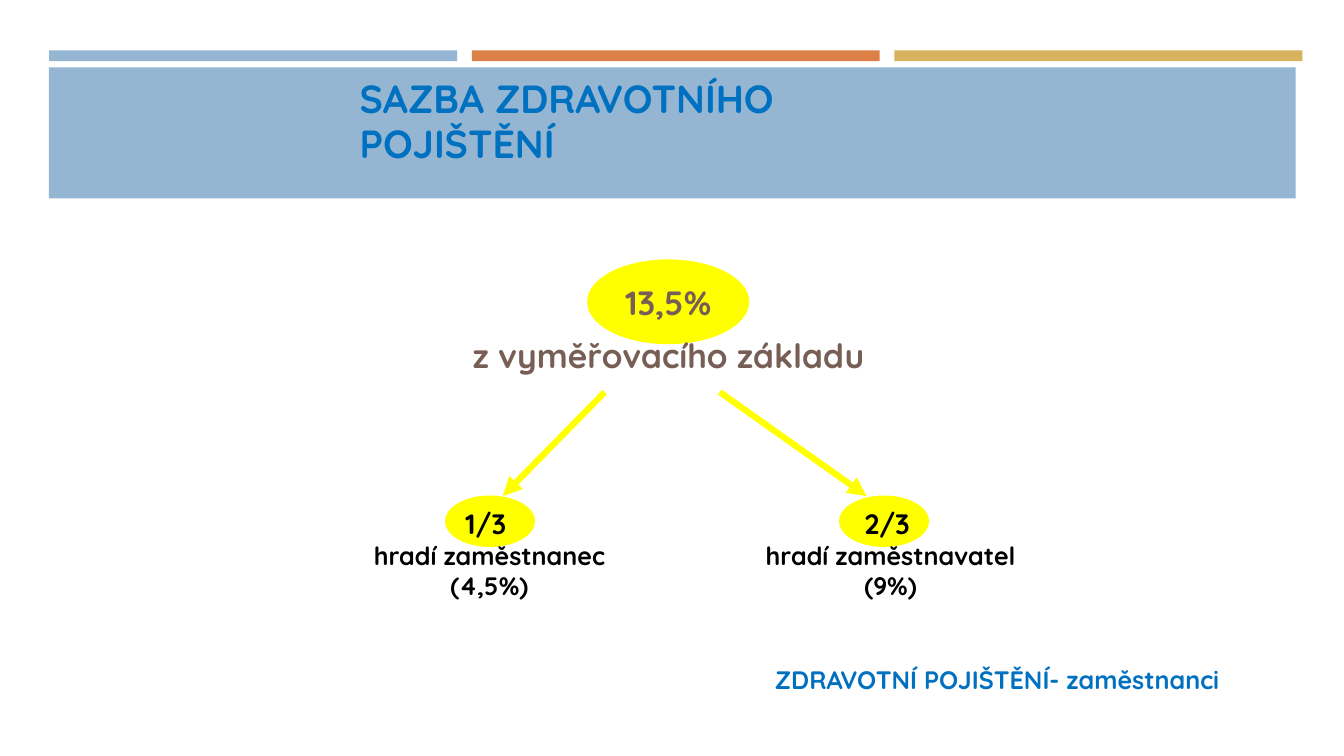
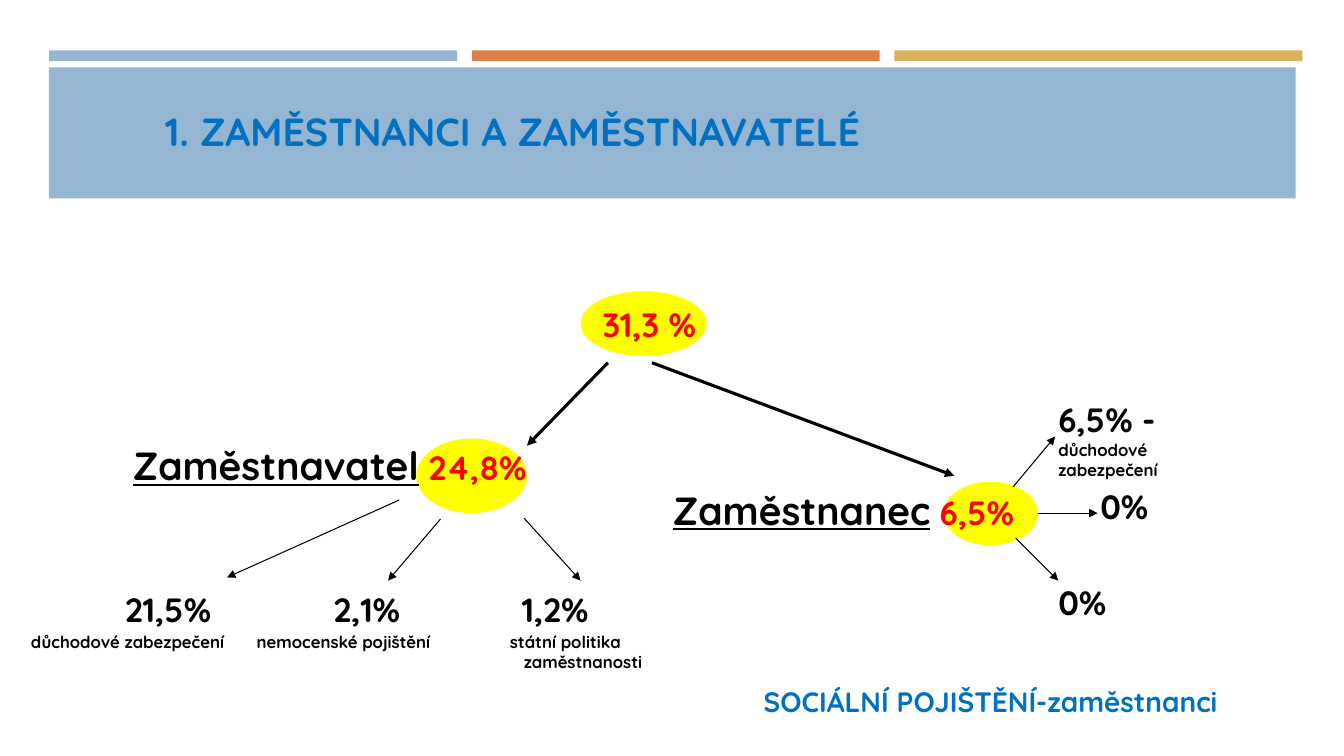
from dataclasses import dataclass
from typing import Any, NamedTuple

from lxml.etree import SubElement
from pptx import Presentation
from pptx.dml.color import RGBColor
from pptx.enum.shapes import MSO_CONNECTOR as Connector, MSO_SHAPE as Shape
from pptx.enum.text import MSO_ANCHOR as Anchor, MSO_AUTO_SIZE as AutoSize, PP_ALIGN as Align
from pptx.oxml.ns import qn
from pptx.util import Cm, Pt


@dataclass(frozen=True)
class Theme:
    font: str = "Quicksand"
    blue: str = "94B6D2"
    orange: str = "DD8047"
    gold: str = "D8B25C"
    heading: str = "0070C0"
    brown: str = "775F55"
    yellow: str = "FFFF00"
    red: str = "FF0000"
    black: str = "000000"
    title: int = 28
    figure: int = 24
    share: int = 20
    text: int = 18
    small: int = 12


T = Theme()


class Box(NamedTuple):
    left: float
    top: float
    width: float
    height: float


class Run(NamedTuple):
    text: str
    size: int = T.figure
    color: str = T.black
    underline: bool = False


class Para(NamedTuple):
    runs: list[Run]
    indent: float = 0


class Arrow(NamedTuple):
    x1: float
    y1: float
    x2: float
    y2: float
    color: str = T.black
    width: float = 0.75


class Payer(NamedTuple):
    box: Box
    share: str
    name: str
    rate: str


class Contribution(NamedTuple):
    rate: str
    rate_left: float
    label: list[Para]
    label_left: float


def apply(target: Any, fmt: dict[str, Any]) -> None:
    for name, value in fmt.items():
        setattr(target, name, value)


def place(sp: Any, box: Box) -> None:
    apply(sp, {name: Cm(value) for name, value in box._asdict().items()})


def line(text: str, size: int = T.figure, color: str = T.black, indent: float = 0) -> Para:
    return Para([Run(text, size, color)], indent)


def write(tf: Any, paras: list[Para], align: Align = Align.LEFT,
          anchor: Anchor = Anchor.TOP, **spacing: Any) -> None:
    apply(tf, {"word_wrap": True, "auto_size": AutoSize.NONE, "vertical_anchor": anchor})
    for i, para in enumerate(paras):
        p = tf.add_paragraph() if i else tf.paragraphs[0]
        apply(p, {"alignment": align, **spacing})
        pPr = p._p.get_or_add_pPr()
        pPr.set("marL", str(Cm(para.indent)))
        pPr.set("indent", "0")
        SubElement(pPr, qn("a:buNone"))
        for run in para.runs:
            r = p.add_run()
            r.text = run.text
            apply(r.font, {"name": T.font, "size": Pt(run.size), "bold": True,
                           "underline": run.underline})
            r.font.color.rgb = RGBColor.from_string(run.color)


def add_text(s: Any, box: Box, paras: list[Para], **fmt: Any) -> None:
    sp = s.shapes.add_textbox(*map(Cm, box))
    write(sp.text_frame, paras, **fmt)


def fill_placeholder(sp: Any, box: Box, paras: list[Para], **fmt: Any) -> None:
    place(sp, box)
    write(sp.text_frame, paras, **fmt)


def add_back_shape(s: Any, kind: Shape, box: Box, color: str, outlined: bool = False) -> Any:
    """Add a filled shape behind everything else on the slide."""
    sp = s.shapes.add_shape(kind, *map(Cm, box))
    sp.shadow.inherit = False
    sp.fill.solid()
    sp.fill.fore_color.rgb = RGBColor.from_string(color)
    if outlined:
        sp.line.color.rgb = RGBColor.from_string(color)
        sp.line.width = Pt(0.75)
    else:
        sp.line.fill.background()
    s.shapes.element.insert(2, sp.element)
    return sp


def add_arrow(s: Any, a: Arrow) -> None:
    c = s.shapes.add_connector(Connector.STRAIGHT, Cm(a.x1), Cm(a.y1), Cm(a.x2), Cm(a.y2))
    c.line.color.rgb = RGBColor.from_string(a.color)
    c.line.width = Pt(a.width)
    SubElement(c.line._get_or_add_ln(), qn("a:tailEnd"), type="triangle")
    SubElement(c.element.spPr, qn("a:effectLst"))


def add_master_bands(prs: Any, s: Any) -> None:
    """Draw the bands on a slide, then move them to the master."""
    bands = [(Box(1.24 + i * 10.65, 1.27, 10.28, 0.27), color)
             for i, color in enumerate((T.blue, T.orange, T.gold))]
    bands.append((Box(1.23, 1.7, 31.42, 3.3), T.blue))
    for box, color in bands:
        sp = add_back_shape(s, Shape.RECTANGLE, box, color)
        prs.slide_master.shapes.element.insert(2, sp.element)


def build_health_slide(s: Any) -> None:
    title, body = s.placeholders
    fill_placeholder(title, Box(8.81, 1.68, 15.6, 2.82),
                     [line("SAZBA ZDRAVOTNÍHO POJIŠTĚNÍ", T.title, T.heading)],
                     anchor=Anchor.MIDDLE, line_spacing=0.95)
    fill_placeholder(body, Box(11.23, 6.78, 11.23, 3.1),
                     [line("13,5%", color=T.brown),
                      line("z vyměřovacího základu", color=T.brown)],
                     align=Align.CENTER, anchor=Anchor.MIDDLE, line_spacing=0.95,
                     space_before=Pt(4.8), space_after=Pt(6))
    for box in (Box(14.81, 6.55, 4.06, 2.11), Box(11.23, 12.5, 2.24, 1.27),
                Box(21.16, 12.5, 2.24, 1.27)):
        add_back_shape(s, Shape.OVAL, box, T.yellow, outlined=True)
    for arrow in (Arrow(15.24, 9.88, 12.67, 12.5, T.yellow, 4.5),
                  Arrow(18.14, 9.88, 21.84, 12.5, T.yellow, 4.5)):
        add_arrow(s, arrow)
    for payer in (Payer(Box(8.26, 12.65, 8.15, 2.64), "1/3", "hradí zaměstnanec", "(4,5%)"),
                  Payer(Box(18.14, 12.65, 8.61, 2.64), "2/3", "hradí zaměstnavatel", "(9%)")):
        add_text(s, payer.box,
                 [Para([Run(payer.share, T.share), Run(" ", T.text)]),
                  line(payer.name, T.text), line(payer.rate, T.text)], align=Align.CENTER)
    add_text(s, Box(19.28, 16.38, 13.36, 1.24),
             [line("ZDRAVOTNÍ POJIŠTĚNÍ- zaměstnanci", T.text, T.heading)],
             anchor=Anchor.BOTTOM)


def build_social_slide(s: Any) -> None:
    heading = {"align": Align.CENTER, "anchor": Anchor.BOTTOM, "line_spacing": 0.9}
    fill_placeholder(s.shapes.title, Box(3.1, 2.46, 19.91, 1.57),
                     [line("1. ZAMĚSTNANCI A ZAMĚSTNAVATELÉ ", T.title, T.heading)], **heading)
    for box in (Box(14.63, 7.34, 3.18, 1.63), Box(10.49, 11.05, 2.79, 1.88),
                Box(23.77, 12.14, 2.39, 1.6)):
        add_back_shape(s, Shape.OVAL, box, T.yellow)
    for arrow in (Arrow(15.32, 9.14, 13.28, 11.23, width=2.25),
                  Arrow(16.43, 9.14, 24.05, 11.99, width=2.25),
                  Arrow(25.53, 12.27, 26.59, 11),
                  Arrow(26.16, 12.93, 27.66, 12.93),
                  Arrow(25.6, 13.56, 26.67, 14.63),
                  Arrow(13.21, 13.06, 14.63, 14.63),
                  Arrow(11.1, 13.08, 9.78, 14.63),
                  Arrow(10.06, 12.6, 5.72, 14.55)):
        add_arrow(s, arrow)
    add_text(s, Box(14.94, 7.54, 3.71, 1.27), [line("31,3 %", color=T.red)])
    for box, payer, rate in ((Box(3.1, 11, 11.68, 1.45), "Zaměstnavatel", " 24,8%"),
                             (Box(16.71, 12.12, 9.6, 1.45), "Zaměstnanec", " 6,5%")):
        add_text(s, box, [Para([Run(payer, T.title, underline=True), Run(rate, color=T.red)])])
    add_text(s, Box(26.42, 9.93, 4.6, 2.31),
             [Para([Run("6,5% - "), Run("důchodové zabezpečení", T.small)])])
    for left, top in ((27.48, 12.12), (26.42, 14.55)):
        add_text(s, Box(left, top, 2, 1.27), [line("0%")])
    for item in (
            Contribution("21,5%", 2.9, [line("důchodové zabezpečení", T.small)], 0.53),
            Contribution("2,1%", 8.15, [line("nemocenské pojištění", T.small)], 6.22),
            Contribution("1,2%", 12.9, [line("státní politika", T.small),
                                        line("zaměstnanosti", T.small, indent=0.35)], 12.6)):
        add_text(s, Box(item.rate_left, 14.71, 3.2, 1.27), [line(item.rate)])
        add_text(s, Box(item.label_left, 15.8, 5.6, 1.27), item.label)
    add_text(s, Box(18.64, 16.66, 12.85, 1.57),
             [line("SOCIÁLNÍ POJIŠTĚNÍ-zaměstnanci ", T.share, T.heading)], **heading)


def main() -> None:
    prs = Presentation()
    apply(prs, {"slide_width": Cm(33.87), "slide_height": Cm(19.05)})
    health, social = (prs.slides.add_slide(prs.slide_layouts[i]) for i in (1, 5))
    add_master_bands(prs, health)
    build_health_slide(health)
    build_social_slide(social)
    prs.save("out.pptx")


if __name__ == "__main__":
    main()
